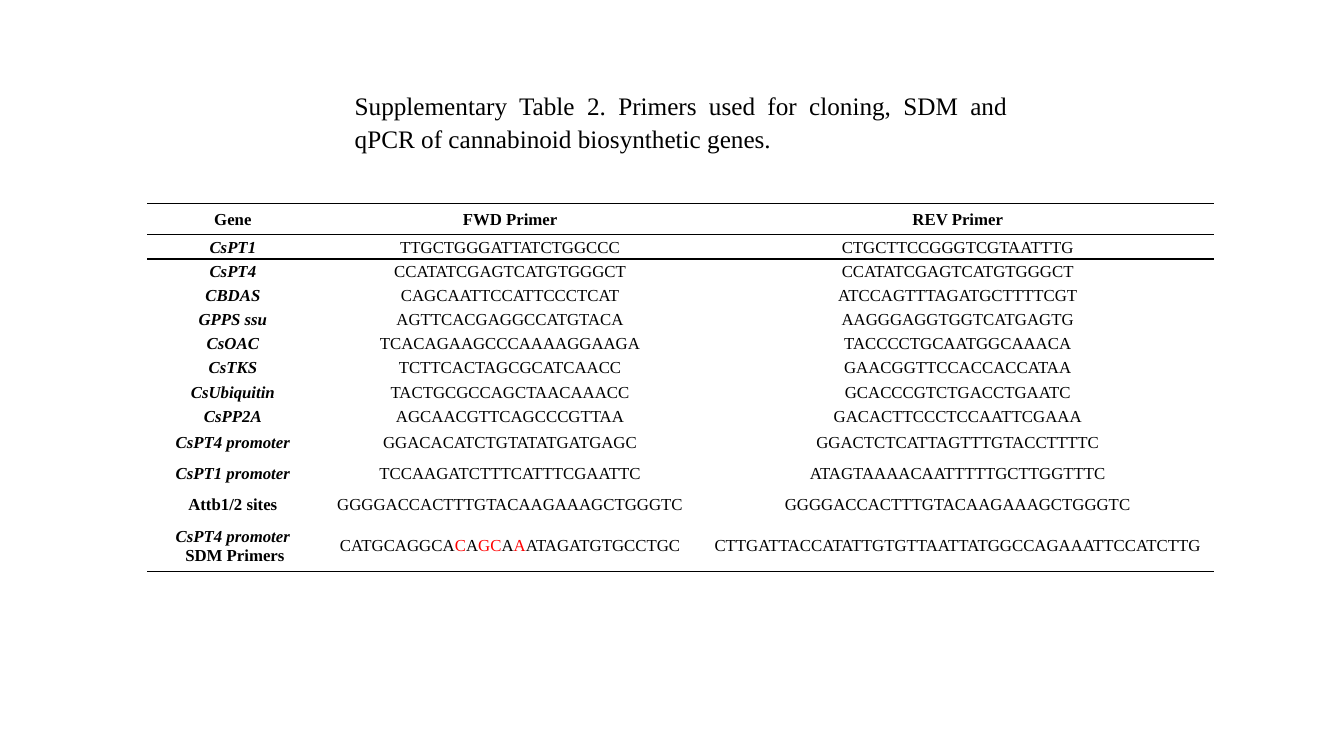
"""Build a slide with a table of cloning, SDM and qPCR primers."""
import lxml.etree
import pptx
import pptx.dml.color
import pptx.enum.text
import pptx.oxml.ns
import pptx.util

Inches = pptx.util.Inches
Pt = pptx.util.Pt
PP_ALIGN = pptx.enum.text.PP_ALIGN
qn = pptx.oxml.ns.qn


def style_run(r, size, color="000000", bold=False, italic=False):
    r.font.name = "Times New Roman"
    r.font.size = Pt(size)
    r.font.bold = bold
    r.font.italic = italic
    r.font.color.rgb = pptx.dml.color.RGBColor.from_string(color)


def add_border(cell, side, color="000000"):
    ln = lxml.etree.SubElement(cell._tc.get_or_add_tcPr(), qn("a:" + side), w=str(Pt(1)))
    fill = lxml.etree.SubElement(ln, qn("a:solidFill"))
    lxml.etree.SubElement(fill, qn("a:srgbClr"), val=color)


prs = pptx.Presentation()
prs.slide_width = Inches(13.33)
prs.slide_height = Inches(7.5)
s = prs.slides.add_slide(prs.slide_layouts[6])

tf = s.shapes.add_textbox(Inches(3.42), Inches(0.83), Inches(6.67), Inches(0.73)).text_frame
tf.word_wrap = True
p = tf.paragraphs[0]
p.text = "Supplementary Table 2. Primers used for cloning, SDM and qPCR of cannabinoid biosynthetic genes."
p.alignment = PP_ALIGN.JUSTIFY
p.line_spacing = 1.07
p.space_after = Pt(8)
style_run(p.runs[0], 18)

# Bars enclose the mutated bases, which are set in red.
primers = [
    ("Gene", "FWD Primer", "REV Primer"),
    ("CsPT1", "TTGCTGGGATTATCTGGCCC", "CTGCTTCCGGGTCGTAATTTG"),
    ("CsPT4", "CCATATCGAGTCATGTGGGCT", "CCATATCGAGTCATGTGGGCT"),
    ("CBDAS", "CAGCAATTCCATTCCCTCAT", "ATCCAGTTTAGATGCTTTTCGT"),
    ("GPPS ssu", "AGTTCACGAGGCCATGTACA", "AAGGGAGGTGGTCATGAGTG"),
    ("CsOAC", "TCACAGAAGCCCAAAAGGAAGA", "TACCCCTGCAATGGCAAACA"),
    ("CsTKS", "TCTTCACTAGCGCATCAACC", "GAACGGTTCCACCACCATAA"),
    ("CsUbiquitin", "TACTGCGCCAGCTAACAAACC", "GCACCCGTCTGACCTGAATC"),
    ("CsPP2A", "AGCAACGTTCAGCCCGTTAA", "GACACTTCCCTCCAATTCGAAA"),
    ("CsPT4 promoter", "GGACACATCTGTATATGATGAGC", "GGACTCTCATTAGTTTGTACCTTTTC"),
    ("CsPT1 promoter", "TCCAAGATCTTTCATTTCGAATTC", "ATAGTAAAACAATTTTTGCTTGGTTTC"),
    ("Attb1/2 sites", "GGGGACCACTTTGTACAAGAAAGCTGGGTC", "GGGGACCACTTTGTACAAGAAAGCTGGGTC"),
    ("CsPT4 promoter\n SDM Primers", "CATGCAGGCA|C|A|GC|A|A|ATAGATGTGCCTGC",
     "CTTGATTACCATATTGTGTTAATTATGGCCAGAAATTCCATCTTG"),
]
col_widths = [1.7, 3.8, 5.08]
row_heights = [0.31] + [0.24] * 8 + [0.27, 0.27, 0.32, 0.48]
upright = ("Gene", "Attb1/2 sites", " SDM Primers")
last = len(primers) - 1

table = s.shapes.add_table(len(primers), len(col_widths), Inches(1.46), Inches(2.02),
                           Inches(sum(col_widths)), Inches(sum(row_heights))).table
table.first_row = False
table.horz_banding = False
table._tbl.tblPr.find(qn("a:tableStyleId")).text = "{2D5ABB26-0587-4C30-8999-92F81FD0307C}"
for column, width in zip(table.columns, col_widths):
    column.width = Inches(width)

for i, (row, height) in enumerate(zip(primers, row_heights)):
    table.rows[i].height = Inches(height)
    for j, text in enumerate(row):
        cell = table.cell(i, j)
        cell.vertical_anchor = pptx.enum.text.MSO_ANCHOR.MIDDLE
        if i <= 8:
            cell.margin_left = cell.margin_right = Inches(0.07)
            cell.margin_top = Inches(0.01)
            cell.margin_bottom = 0
        if i in (0, 1):
            add_border(cell, "lnT")
        if i in (0, last):
            add_border(cell, "lnB")
        cell.fill.background()
        cell.text_frame.text = text.replace("|", "")
        for p in cell.text_frame.paragraphs:
            p.alignment = PP_ALIGN.CENTER
            line = p.text
            if "|" in text:
                p.clear()
                for k, bases in enumerate(text.split("|")):
                    r = p.add_run()
                    r.text = bases
                    style_run(r, 12, "FF0000" if k % 2 else "000000")
            else:
                style_run(p.runs[0], 12, bold=i == 0 or j == 0,
                          italic=j == 0 and line not in upright)

prs.save("out.pptx")
